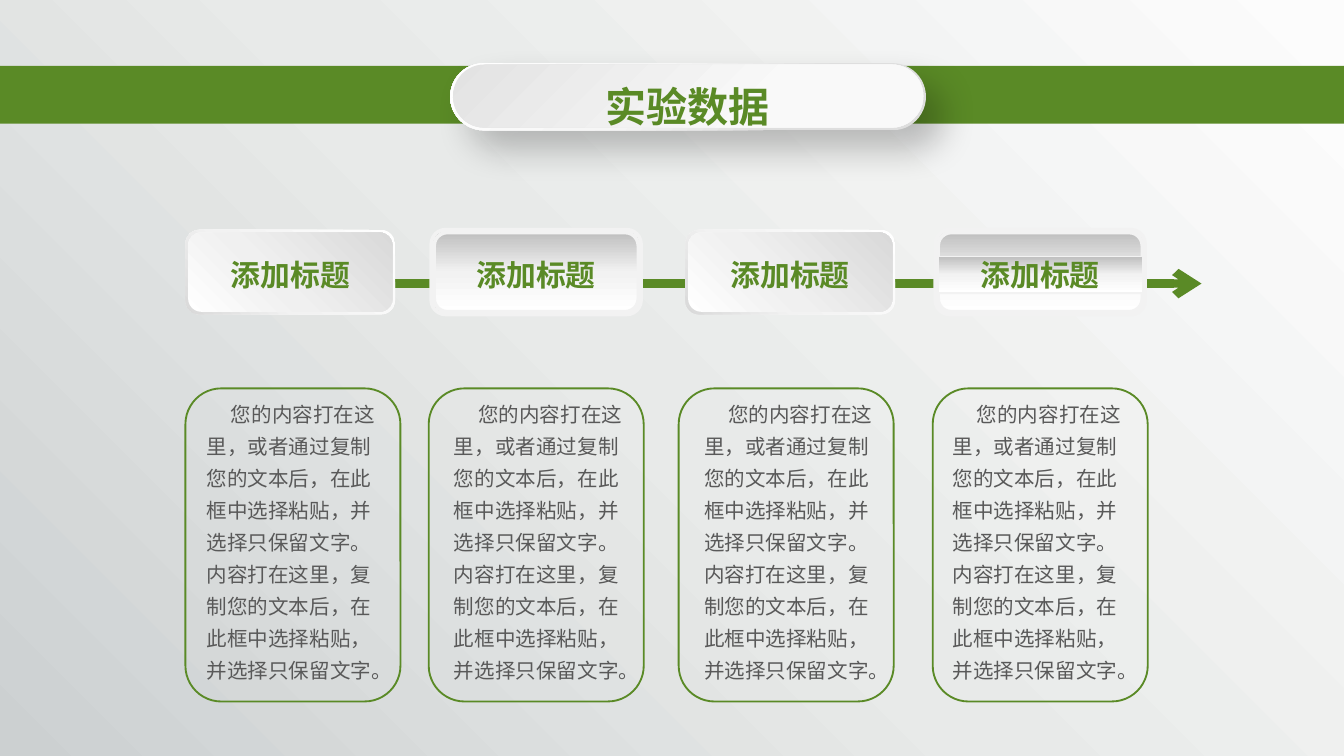
from lxml import etree
from pptx import Presentation
from pptx.dml.color import RGBColor
from pptx.enum.shapes import MSO_CONNECTOR, MSO_SHAPE
from pptx.enum.text import MSO_ANCHOR, PP_ALIGN
from pptx.oxml.ns import qn
from pptx.util import Inches, Pt

RECTANGLE = MSO_SHAPE.RECTANGLE
ROUNDED = MSO_SHAPE.ROUNDED_RECTANGLE
STRAIGHT = MSO_CONNECTOR.STRAIGHT
TOP = MSO_ANCHOR.TOP
LEFT, CENTER = PP_ALIGN.LEFT, PP_ALIGN.CENTER

PAGE_WIDTH = 10
PAGE_HEIGHT = PAGE_WIDTH * 9 / 16

GREEN, GREY = "5A8A26", "595959"
BORDER = "F2F2F2"
CHINESE_FONT, LABEL_FONT = "Noto Sans CJK SC", "Arial"

# A gradient is a clockwise angle and its (percent, colour) stops.
PAGE = (315, [(0, "CCD0D1"), (49, "E8EAE9"), (100, "FCFCFC")])
PILL_RIM = (225, [(1, "DEDEDE"), (30, "E0E0E0"), (61, "F6F6F6"), (100, "FFFFFF")])
PILL_FACE = (45, [(0, "E3E3E3"), (67, "F9F9F9")])
TILE_RIM = (135, [(0, "FFFFFF"), (62, "F2F2F2"), (100, "D9D9D9")])
TILE_FACE = (315, [(0, "FFFFFF"), (42, "F0F0F0"), (100, "D9D9D9")])
GLOSS = (90, [(0, "BFBFBF"), (50, "F2F2F2"), (100, "FFFFFF")])

HEADING = "实验数据"
LABEL = "添加标题"
BODY = ("您的内容打在这里，或者通过复制您的文本后，在此框中选择粘贴，并选择只保留文字。"
        "内容打在这里，复制您的文本后，在此框中选择粘贴，并选择只保留文字。")

CARD_LEFTS = [1.38, 3.19, 5.05, 6.94]
BODY_LEFTS = [1.44, 3.28, 5.14, 6.99]
# Left edge, rim fill, face fill, border, label fill
TILES = [
    (1.38, TILE_RIM, TILE_FACE, None, None),
    (3.21, "000000", GLOSS, BORDER, None),
    (5.10, TILE_RIM, TILE_FACE, None, None),
    (6.96, GLOSS, GLOSS, BORDER, GLOSS),
]


def color(value):
    return RGBColor.from_string(value)


def add_element(parent, tag, **attributes):
    element = etree.SubElement(parent, qn(tag))
    for name, value in attributes.items():
        element.set(name, str(value))
    return element


def set_fill(shape, fill):
    """Apply no fill, a hex colour, or a gradient."""
    if fill is None:
        shape.fill.background()
    elif isinstance(fill, str):
        shape.fill.solid()
        shape.fill.fore_color.rgb = color(fill)
    else:
        angle, stops = fill
        shape.fill.gradient()
        shape.fill.gradient_angle = (360 - angle) % 360
        stop_list = shape.element.spPr.find(".//" + qn("a:gsLst"))
        for stop in list(stop_list):
            stop_list.remove(stop)
        for percent, value in stops:
            stop = add_element(stop_list, "a:gs", pos=percent * 1000)
            add_element(stop, "a:srgbClr", val=value)


def add_box(shapes, kind, box, fill=None, line=None, width=1):
    shape = shapes.add_shape(kind, *map(Inches, box))
    shape.shadow.inherit = False
    set_fill(shape, fill)
    if line:
        shape.line.color.rgb = color(line)
        shape.line.width = Pt(width)
    else:
        shape.line.fill.background()
    return shape


def add_soft_shadow(shape):
    effects = shape.element.spPr.find(qn("a:effectLst"))
    shadow = add_element(effects, "a:outerShdw", blurRad=Pt(19), dist=Pt(14),
                         dir=45 * 60000, algn="tl", rotWithShape=0)
    shade = add_element(shadow, "a:srgbClr", val="000000")
    add_element(shade, "a:alpha", val=24000)


def write_text(shape, text, size, font, value, bold=False, align=CENTER,
               spacing=1.0, insets=(0.1, 0.05)):
    frame = shape.text_frame
    frame.word_wrap = True
    frame.vertical_anchor = TOP
    frame.margin_left = frame.margin_right = Inches(insets[0])
    frame.margin_top = frame.margin_bottom = Inches(insets[1])
    frame.text = text
    paragraph = frame.paragraphs[0]
    paragraph.alignment = align
    paragraph.line_spacing = spacing
    run = paragraph.runs[0]
    run.font.size = Pt(size)
    run.font.bold = bold
    run.font.name = font
    run.font.color.rgb = color(value)
    add_element(run.font._element, "a:ea", typeface=CHINESE_FONT)
    return paragraph


def add_header(shapes):
    add_box(shapes, RECTANGLE, (-0.01, 0.49, 10.01, 0.43), GREEN)
    pill = shapes.add_group_shape().shapes
    rim = add_box(pill, ROUNDED, (3.35, 0.47, 3.54, 0.5), PILL_RIM)
    face = add_box(pill, ROUNDED, (3.37, 0.48, 3.5, 0.47), PILL_FACE)
    for shape in (rim, face):
        shape.adjustments[0] = 0.5
    add_soft_shadow(rim)
    heading = pill.add_textbox(*map(Inches, (3.89, 0.45, 2.45, 0.58)))
    write_text(heading, HEADING, 22, CHINESE_FONT, GREEN, bold=True, spacing=1.3)


def add_arrow(shapes):
    arrow = shapes.add_connector(STRAIGHT, Inches(2.09), Inches(2.11),
                                 Inches(8.94), Inches(2.11))
    arrow.line.color.rgb = color(GREEN)
    arrow.line.width = Pt(4.5)
    add_element(arrow.line._get_or_add_ln(), "a:tailEnd", type="arrow")
    add_element(arrow.element.spPr, "a:effectLst")


def add_body(shapes, left):
    body = shapes.add_textbox(*map(Inches, (left, 2.89, 1.46, 2.27)))
    paragraph = write_text(body, BODY, 11, CHINESE_FONT, GREY, align=LEFT, spacing=1.3)
    paragraph._p.get_or_add_pPr().set("indent", str(Inches(0.18)))


def add_tile(shapes, left, rim, face, border, label_fill):
    tile = shapes.add_group_shape().shapes
    inner = left + 0.02
    add_box(tile, ROUNDED, (left, 1.71, 1.56, 0.63), rim, border, 2)
    add_box(tile, ROUNDED, (inner, 1.73, 1.52, 0.59), face, border, 2)
    label_box = (inner, 1.91, 1.52, 0.27)
    if label_fill:
        label = add_box(tile, RECTANGLE, label_box, label_fill, border, 0.75)
    else:
        label = tile.add_textbox(*map(Inches, label_box))
    write_text(label, LABEL, 16, LABEL_FONT, GREEN, bold=True, insets=(0, 0))


def main():
    presentation = Presentation()
    presentation.slide_width = Inches(PAGE_WIDTH)
    presentation.slide_height = Inches(PAGE_HEIGHT)
    slide = presentation.slides.add_slide(presentation.slide_layouts[6])
    shapes = slide.shapes

    for top in (0, 0.49):
        add_box(shapes, RECTANGLE, (0, top, PAGE_WIDTH, PAGE_HEIGHT - top), PAGE)
    add_header(shapes)
    add_arrow(shapes)
    for left in CARD_LEFTS:
        add_box(shapes, ROUNDED, (left, 2.89, 1.6, 2.33), line=GREEN)
    for left in BODY_LEFTS:
        add_body(shapes, left)
    for tile in TILES:
        add_tile(shapes, *tile)

    presentation.save("out.pptx")


if __name__ == "__main__":
    main()
